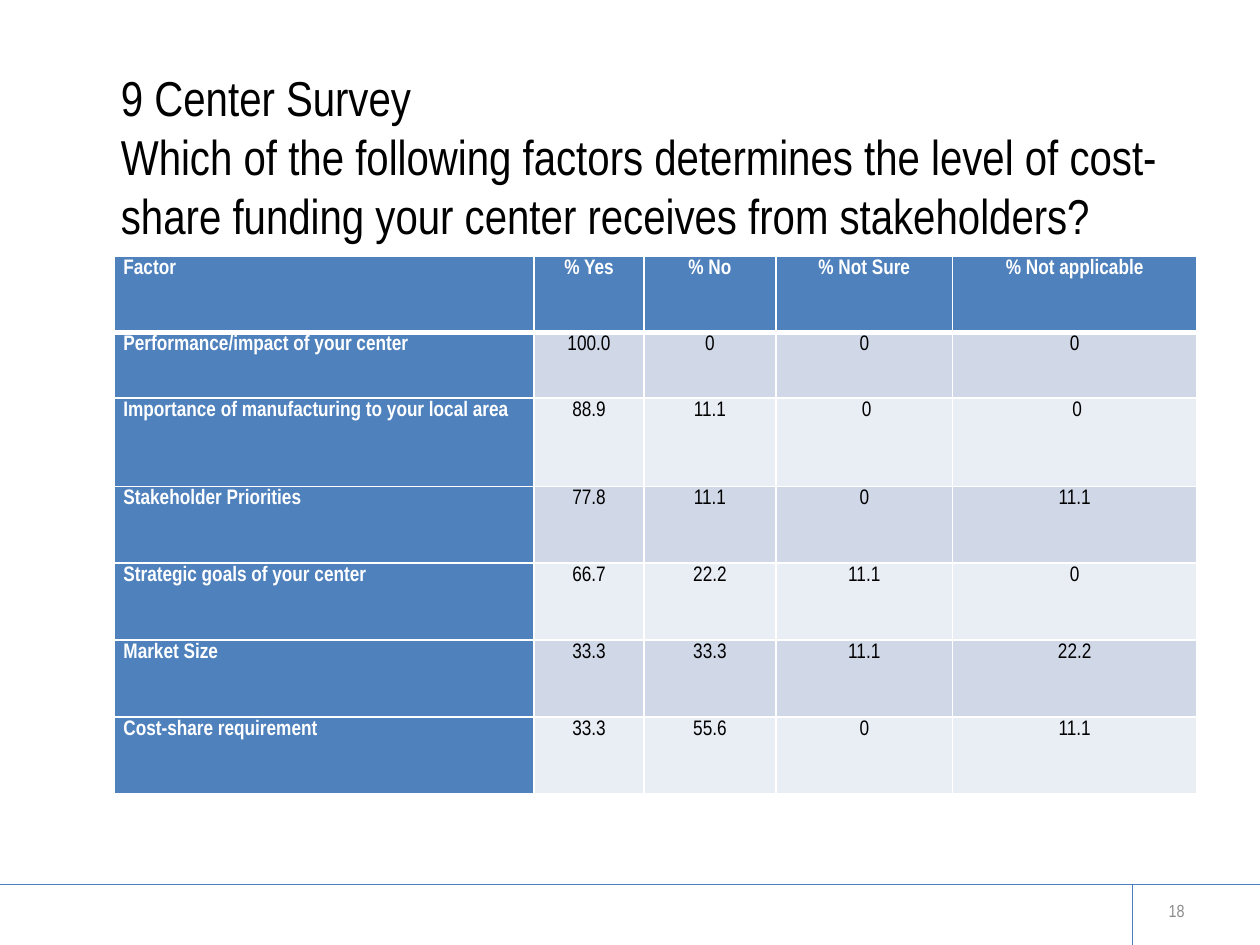
from lxml import etree
from pptx import Presentation
from pptx.dml.color import RGBColor
from pptx.enum import shapes, text
from pptx.oxml import ns
from pptx.util import Inches, Pt

BLACK = RGBColor(0x00, 0x00, 0x00)
WHITE = RGBColor(0xFF, 0xFF, 0xFF)
GRAY = RGBColor(0x8C, 0x8C, 0x8C)
RULE_BLUE = RGBColor(0x4B, 0x7E, 0xBC)
HEADER_BLUE = RGBColor(0x4F, 0x81, 0xBD)
BANDS = (RGBColor(0xD0, 0xD8, 0xE8), RGBColor(0xE9, 0xED, 0xF4))

QUESTION = (
    "9 Center Survey\vWhich of the following factors determines the level of "
    "cost-share funding your center receives from stakeholders?"
)
SURVEY = [
    ("Factor", "% Yes", "% No", "% Not Sure", "% Not applicable"),
    ("Performance/impact of your center", "100.0", "0", "0", "0"),
    ("Importance of manufacturing to your local area", "88.9", "11.1", " 0", " 0"),
    ("Stakeholder Priorities", "77.8", "11.1", "0", "11.1"),
    ("Strategic goals of your center", "66.7", "22.2", "11.1", "0"),
    ("Market Size", "33.3", "33.3", "11.1", "22.2"),
    ("Cost-share requirement", "33.3", "55.6", "0", "11.1"),
]
COLUMN_WIDTHS = (3.33, 0.87, 1.05, 1.4, 1.94)
ROW_HEIGHTS = (0.61, 0.52, 0.7, 0.61, 0.61, 0.61, 0.61)


def write(frame, words, font="Arial Narrow", size=12, color=BLACK, bold=False,
          align=text.PP_ALIGN.LEFT, spacing=1.0):
    para = frame.paragraphs[0]
    para.text = words
    para.alignment = align
    para.line_spacing = spacing
    for span in para.runs:
        span.font.name = font
        span.font.size = Pt(size)
        span.font.bold = bold
        span.font.color.rgb = color


class SurveyPage:
    def __init__(self, deck, font):
        self.page = deck.slides.add_slide(deck.slide_layouts[5])
        self.font = font

    def rule(self, x1, y1, x2, y2):
        line = self.page.shapes.add_connector(
            shapes.MSO_CONNECTOR.STRAIGHT,
            Inches(x1), Inches(y1), Inches(x2), Inches(y2))
        line.line.color.rgb = RULE_BLUE
        line.line.width = Pt(0.75)
        etree.SubElement(line._element.spPr, ns.qn("a:effectLst"))

    def title(self, words, left, top, width, height):
        box = self.page.shapes.title
        box.left, box.top = Inches(left), Inches(top)
        box.width, box.height = Inches(width), Inches(height)
        frame = box.text_frame
        frame.auto_size = text.MSO_AUTO_SIZE.NONE
        frame.word_wrap = True
        frame.vertical_anchor = text.MSO_ANCHOR.MIDDLE
        frame.margin_top, frame.margin_bottom = 0, Inches(0.43)
        write(frame, words, font=self.font, size=28)

    def number(self, words, left, top, width, height):
        box = self.page.shapes.add_textbox(
            Inches(left), Inches(top), Inches(width), Inches(height))
        frame = box.text_frame
        frame.word_wrap = True
        frame.vertical_anchor = text.MSO_ANCHOR.MIDDLE
        write(frame, words, font=self.font, size=10, color=GRAY,
              align=text.PP_ALIGN.RIGHT)

    def borders(self, cell, top, bottom):
        props = cell._tc.get_or_add_tcPr()
        for side, points in (("L", 1), ("R", 1), ("T", top), ("B", bottom)):
            edge = etree.SubElement(props, ns.qn(f"a:ln{side}"), w=str(Pt(points)))
            fill = etree.SubElement(edge, ns.qn("a:solidFill"))
            etree.SubElement(fill, ns.qn("a:srgbClr"), val=str(WHITE))

    def table(self, rows, widths, heights, left, top):
        table = self.page.shapes.add_table(
            len(rows), len(widths), Inches(left), Inches(top),
            Inches(sum(widths)), Inches(sum(heights))).table
        table.first_col = True
        for column, width in zip(table.columns, widths):
            column.width = Inches(width)
        for r, values in enumerate(rows):
            table.rows[r].height = Inches(heights[r])
            for c, value in enumerate(values):
                heading = r == 0 or c == 0
                cell = table.cell(r, c)
                cell.margin_left = cell.margin_right = Inches(0.07)
                cell.margin_top = cell.margin_bottom = 0
                self.borders(cell, 3 if r == 1 else 1, 3 if r == 0 else 1)
                cell.fill.solid()
                cell.fill.fore_color.rgb = HEADER_BLUE if heading else BANDS[(r - 1) % 2]
                write(cell.text_frame, value, font=self.font, bold=heading,
                      color=WHITE if heading else BLACK, spacing=1.15,
                      align=text.PP_ALIGN.CENTER if c else text.PP_ALIGN.LEFT)


def main():
    deck = Presentation()
    deck.slide_width, deck.slide_height = Inches(10), Inches(7.5)
    survey = SurveyPage(deck, "Arial Narrow")
    survey.rule(0, 7.02, 10, 7.02)
    survey.rule(8.99, 7.02, 8.99, 7.5)
    survey.title(QUESTION, 0.86, 1.05, 8.64, 0.8)
    survey.table(SURVEY, COLUMN_WIDTHS, ROW_HEIGHTS, 0.91, 2.03)
    survey.number("18", 7.17, 7.11, 2.33, 0.24)
    deck.save("out.pptx")


if __name__ == "__main__":
    main()
